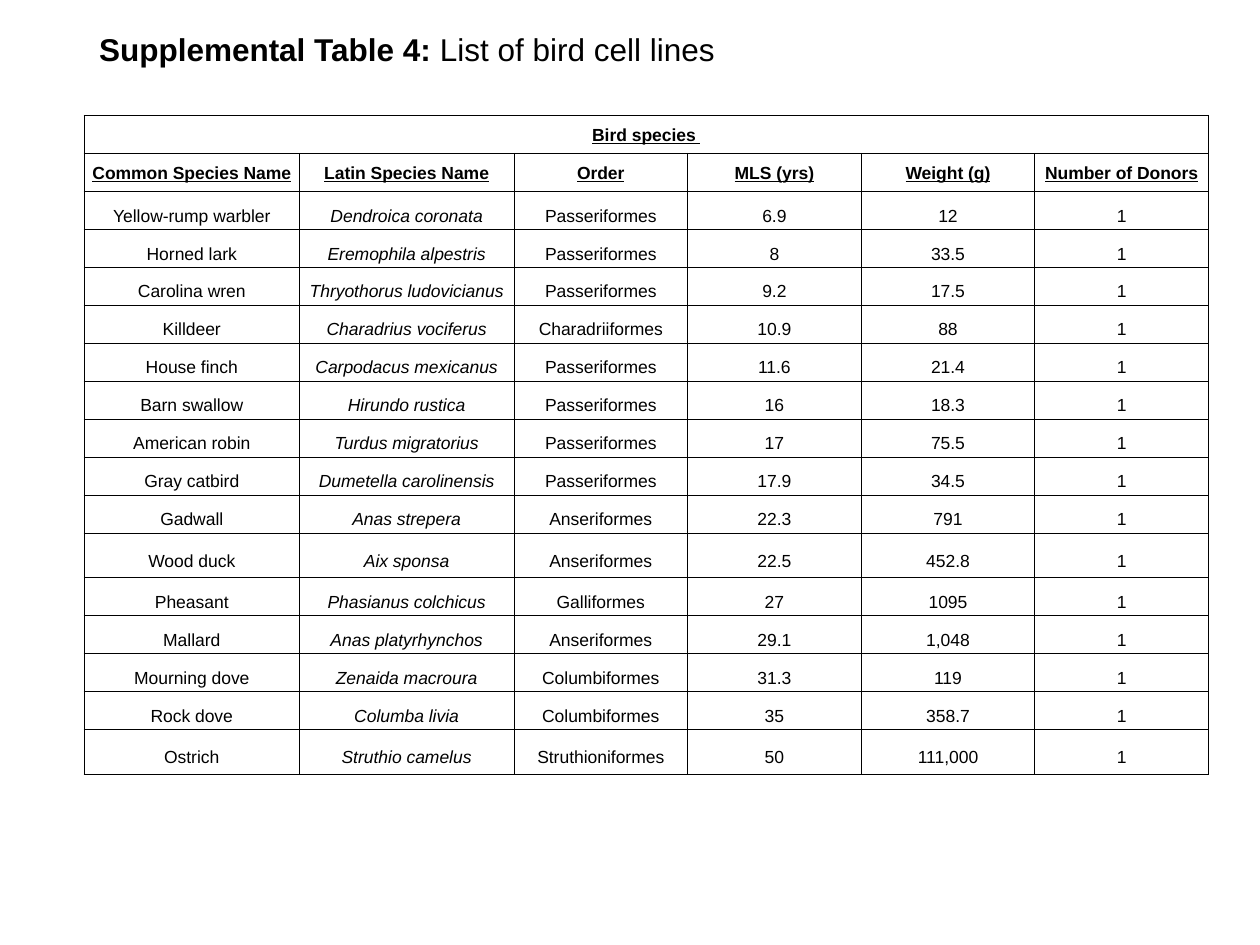
from dataclasses import dataclass

from lxml import etree
from pptx import Presentation
from pptx import util as u
from pptx.dml import color
from pptx.enum import text
from pptx.oxml import ns


@dataclass(frozen=True)
class Theme:
    font: str = "Arial"
    ink: str = "000000"
    title: u.Length = u.Pt(18)
    body: u.Length = u.Pt(10)
    thin: u.Length = u.Pt(0.5)
    thick: u.Length = u.Pt(1)


theme = Theme()


def style_font(font, size, bold):
    font.name = theme.font
    font.size = size
    font.bold = bold
    font.color.rgb = color.RGBColor.from_string(theme.ink)


def add_border(cell, side, width):
    properties = cell._tc.get_or_add_tcPr()
    line = etree.SubElement(properties, ns.qn(f"a:ln{side}"), w=str(width))
    fill = etree.SubElement(line, ns.qn("a:solidFill"))
    etree.SubElement(fill, ns.qn("a:srgbClr"), val=theme.ink)


heading = "Bird species "
columns = ["Common Species Name", "Latin Species Name", "Order",
           "MLS (yrs)", "Weight (g)", "Number of Donors"]
birds = [
    ("Yellow-rump warbler", "Dendroica coronata", "Passeriformes", "6.9", "12"),
    ("Horned lark", "Eremophila alpestris", "Passeriformes", "8", "33.5"),
    ("Carolina wren", "Thryothorus ludovicianus", "Passeriformes", "9.2", "17.5"),
    ("Killdeer", "Charadrius vociferus", "Charadriiformes", "10.9", "88"),
    ("House finch", "Carpodacus mexicanus", "Passeriformes", "11.6", "21.4"),
    ("Barn swallow", "Hirundo rustica", "Passeriformes", "16", "18.3"),
    ("American robin", "Turdus migratorius", "Passeriformes", "17", "75.5"),
    ("Gray catbird", "Dumetella carolinensis", "Passeriformes", "17.9", "34.5"),
    ("Gadwall", "Anas strepera", "Anseriformes", "22.3", "791"),
    ("Wood duck", "Aix sponsa", "Anseriformes", "22.5", "452.8"),
    ("Pheasant", "Phasianus colchicus", "Galliformes", "27", "1095"),
    ("Mallard", "Anas platyrhynchos", "Anseriformes", "29.1", "1,048"),
    ("Mourning dove", "Zenaida macroura", "Columbiformes", "31.3", "119"),
    ("Rock dove", "Columba livia", "Columbiformes", "35", "358.7"),
    ("Ostrich", "Struthio camelus", "Struthioniformes", "50", "111,000"),
]
donors = "1"
rows = [[heading] + [""] * (len(columns) - 1), columns]
rows += [[*bird, donors] for bird in birds]

deck = Presentation()
deck.slide_width, deck.slide_height = u.Cm(25.4), u.Cm(19.05)
page = deck.slides.add_slide(deck.slide_layouts[6])

table_height, tall_height = 13.28, 0.9
tall_birds = {"Wood duck", "Ostrich"}
row_height = (table_height - len(tall_birds) * tall_height) / (len(rows) - len(tall_birds))
column_widths = [4.33] * 2 + [3.5] * 4

frame = page.shapes.add_table(len(rows), len(columns), u.Cm(1.7), u.Cm(2.33),
                              u.Cm(sum(column_widths)), u.Cm(table_height))
table = frame.table
table.first_row = False
table.horz_banding = False
for column, width in zip(table.columns, column_widths):
    column.width = u.Cm(width)
table.cell(0, 0).merge(table.cell(0, len(columns) - 1))

for r, values in enumerate(rows):
    table.rows[r].height = u.Cm(tall_height if values[0] in tall_birds else row_height)
    is_header = r < 2
    for c, value in enumerate(values):
        cell = table.cell(r, c)
        cell.vertical_anchor = text.MSO_ANCHOR.MIDDLE
        cell.margin_left = cell.margin_right = cell.margin_top = u.Cm(0.03)
        cell.margin_bottom = 0
        outer = {"L": r == 0 or c == 0, "R": r == 0 or c == len(columns) - 1,
                 "T": r <= 2, "B": is_header}
        for side, is_thick in outer.items():
            add_border(cell, side, theme.thick if is_thick else theme.thin)
        cell.fill.background()
        if cell.is_spanned:
            continue
        cell.text = value
        para = cell.text_frame.paragraphs[0]
        para.alignment = text.PP_ALIGN.CENTER
        style_font(para.font, theme.body, is_header)
        para.font.underline = is_header
        if not is_header:
            para.font.italic = c == 1
            para.line_spacing = 1.5
            para.space_after = u.Pt(6)

box = page.shapes.add_textbox(u.Cm(1.75), u.Cm(0.48), u.Cm(13.03), u.Cm(1.02))
box.text_frame.word_wrap = False
box.text_frame.auto_size = text.MSO_AUTO_SIZE.SHAPE_TO_FIT_TEXT
para = box.text_frame.paragraphs[0]
for words, bold in [("Supplemental Table 4: ", True), ("List of bird cell lines", False)]:
    span = para.add_run()
    span.text = words
    style_font(span.font, theme.title, bold)

deck.save("out.pptx")
